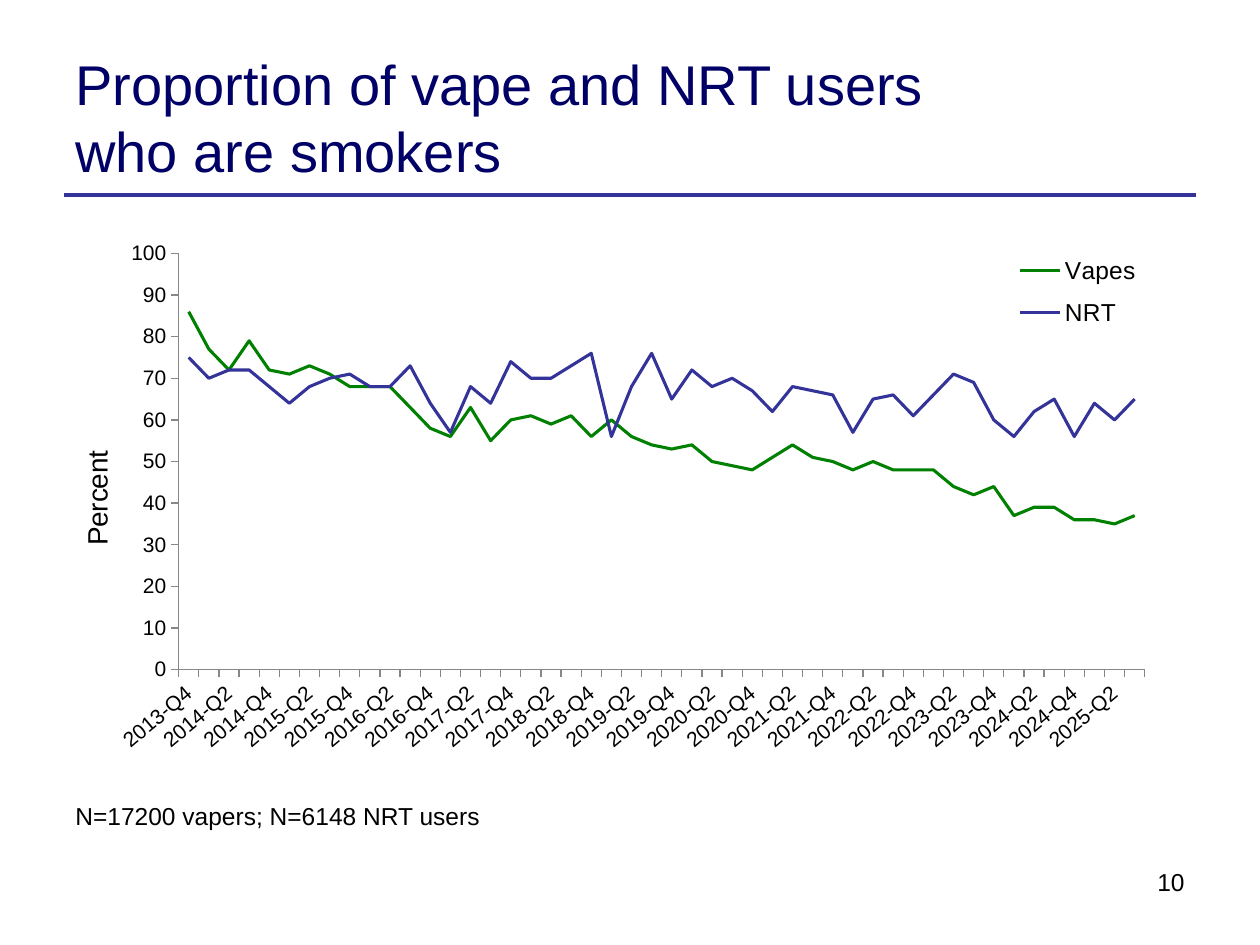
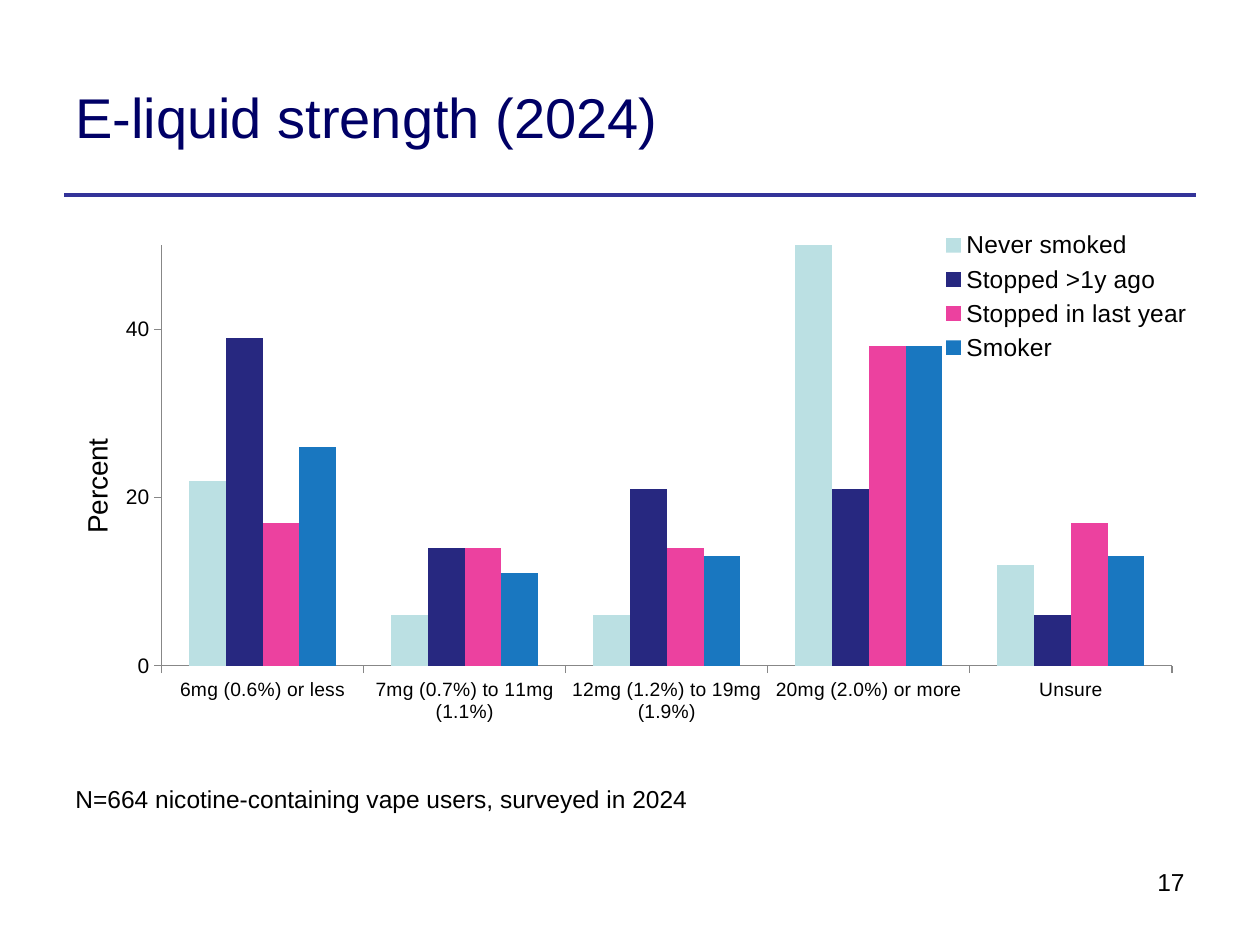
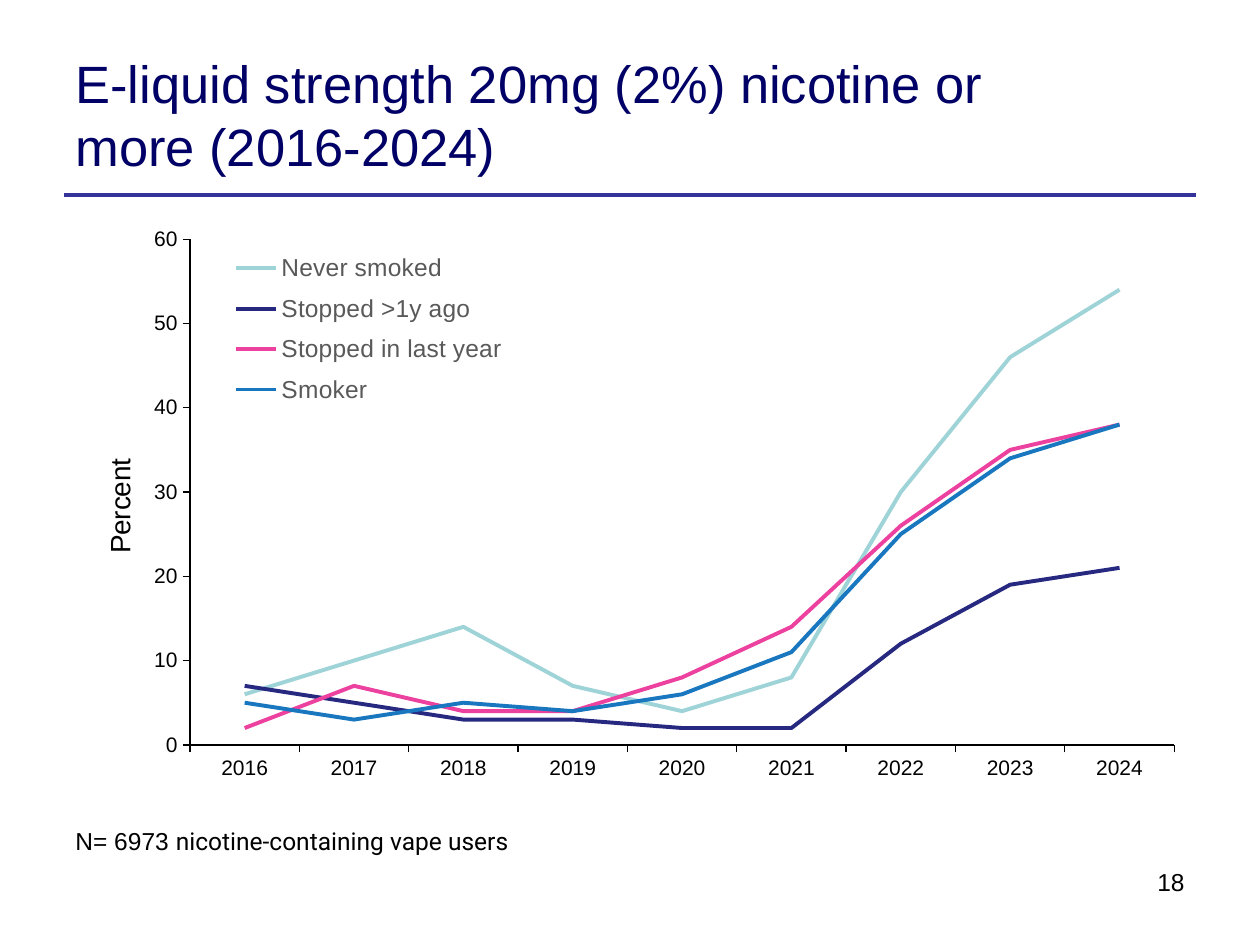
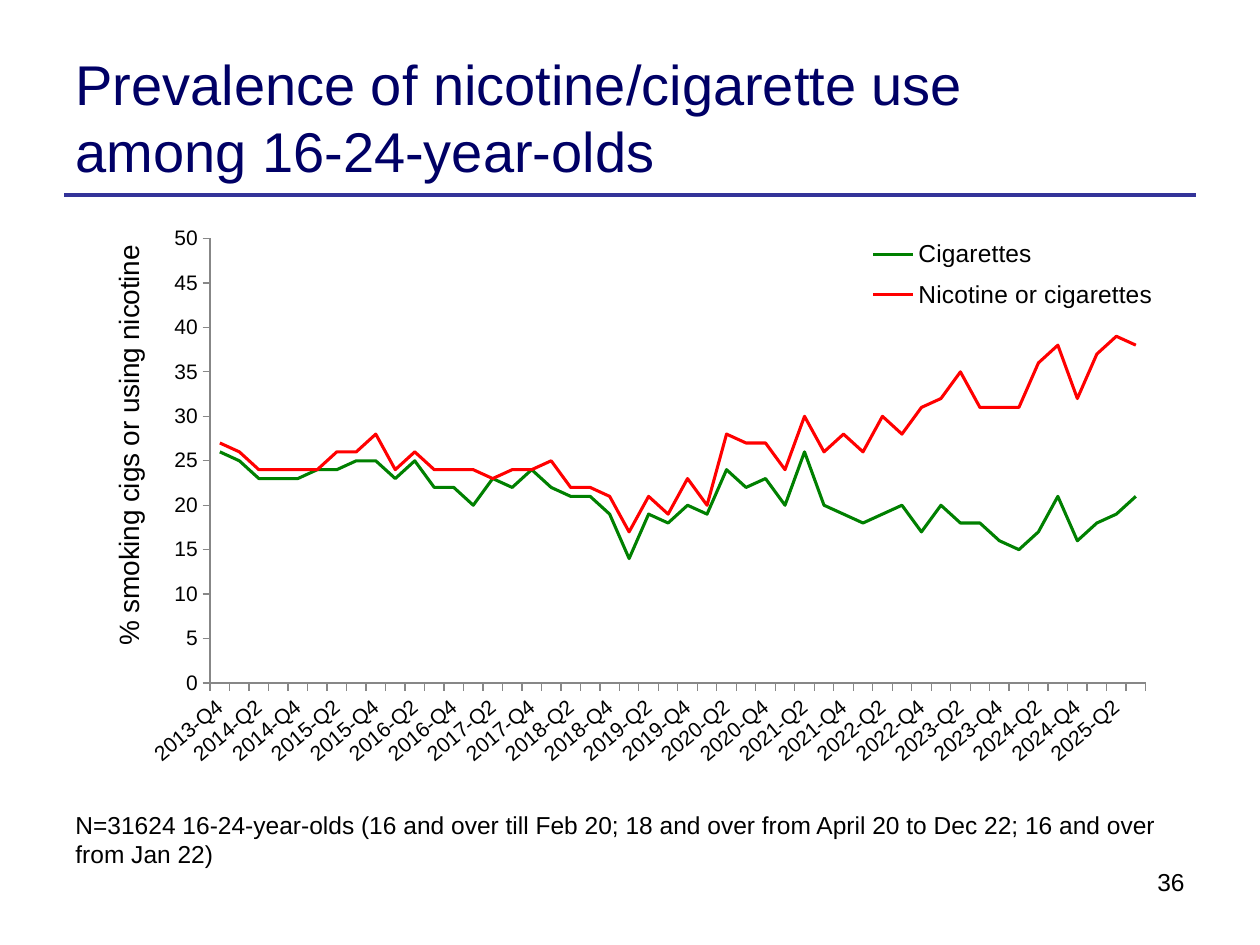
import lxml.etree
import pptx
import pptx.chart.data
import pptx.dml.color
import pptx.enum.chart
import pptx.enum.shapes
import pptx.enum.text
import pptx.oxml.ns
import pptx.util

COLUMNS, ROWS = 100, 75
FONT = "Arial"
COLORS = {
    "title": "000066",
    "rule": "333399",
    "text": "000000",
    "axis": "878787",
    "legend": "595959",
    "green": "008000",
    "red": "FF0000",
    "pale": "BBE0E3",
    "teal": "9ED3D7",
    "navy": "272880",
    "pink": "EC419F",
    "blue": "1977C0",
}
LINE = pptx.enum.chart.XL_CHART_TYPE.LINE
COLUMN = pptx.enum.chart.XL_CHART_TYPE.COLUMN_CLUSTERED
LEGEND = pptx.enum.chart.XL_LEGEND_POSITION
QUARTERS = [f"{2013 + index // 4}-Q{index % 4 + 1}" for index in range(3, 51)]
SMOKING_GROUPS = ["Never smoked", "Stopped >1y ago", "Stopped in last year", "Smoker"]

presentation = pptx.Presentation()
presentation.slide_width = pptx.util.Inches(10)
presentation.slide_height = pptx.util.Inches(7.5)


def rgb(name):
    return pptx.dml.color.RGBColor.from_string(COLORS[name])


def grid(left, top, width, height):
    column = presentation.slide_width / COLUMNS
    row = presentation.slide_height / ROWS
    return [round(length) for length in (left * column, top * row, width * column, height * row)]


def set_font(font, size, color="text", name=FONT):
    font.size = pptx.util.Pt(size)
    font.name = name
    font.bold = False
    font.color.rgb = rgb(color)


def add_text(slide, box, *runs, size=14, color="text", align="LEFT", anchor="TOP"):
    frame = slide.shapes.add_textbox(*grid(*box)).text_frame
    frame.word_wrap = True
    frame.vertical_anchor = pptx.enum.text.MSO_ANCHOR[anchor]
    paragraph = frame.paragraphs[0]
    paragraph.alignment = pptx.enum.text.PP_ALIGN[align]
    for text, font_name in runs:
        run = paragraph.add_run()
        run.text = text
        set_font(run.font, size, color, font_name)


def add_rule(slide, left, top, width):
    x, y, length, _ = grid(left, top, width, 0)
    rule = slide.shapes.add_connector(
        pptx.enum.shapes.MSO_CONNECTOR.STRAIGHT, x, y, x + length, y)
    rule.line.color.rgb = rgb("rule")
    rule.line.width = pptx.util.Pt(2.25)
    properties = rule._element.spPr
    lxml.etree.SubElement(properties, pptx.oxml.ns.qn("a:effectLst"))


def place(parent, shares, inner=False):
    qn = pptx.oxml.ns.qn
    layout = parent.find(qn("c:layout"))
    if layout is None:
        layout = parent.makeelement(qn("c:layout"))
        overlay = parent.find(qn("c:overlay"))
        parent.insert(0 if overlay is None else parent.index(overlay), layout)
    manual = lxml.etree.SubElement(layout, qn("c:manualLayout"))
    settings = [("layoutTarget", "inner")] if inner else []
    settings += [("xMode", "edge"), ("yMode", "edge")]
    settings += zip("xywh", shares)
    for tag, value in settings:
        lxml.etree.SubElement(manual, qn(f"c:{tag}"), val=str(value))


def format_axis(axis, size, color):
    axis.has_major_gridlines = False
    axis.major_tick_mark = pptx.enum.chart.XL_TICK_MARK.OUTSIDE
    axis.minor_tick_mark = pptx.enum.chart.XL_TICK_MARK.NONE
    axis.format.line.color.rgb = rgb(color)
    axis.format.line.width = pptx.util.Pt(0.75)
    set_font(axis.tick_labels.font, size)


def add_axis_title(chart, text, position):
    axis = chart.value_axis
    frame = axis.axis_title.text_frame
    frame.text = text
    set_font(frame.paragraphs[0].runs[0].font, 16)
    title = chart._chartSpace.xpath(".//c:valAx/c:title")[0]
    title.xpath(".//a:bodyPr")[0].set("rot", "-5400000")
    place(title, position)


def tilt_labels(chart):
    axis = chart._chartSpace.xpath(".//c:catAx")[0]
    axis.xpath("./c:txPr/a:bodyPr")[0].set("rot", "-2400000")
    skip = axis.makeelement(pptx.oxml.ns.qn("c:tickLblSkip"), val="2")
    axis.xpath("./c:noMultiLvlLbl")[0].addprevious(skip)


def add_legend(chart, position, shares, color, overlay):
    chart.has_legend = True
    chart.legend.position = position
    chart.legend.include_in_layout = overlay
    set_font(chart.legend.font, 14, color)
    place(chart._chartSpace.xpath(".//c:legend")[0], shares)


def add_chart(slide, box, categories, series, plot, legend, axis_title, title_at,
              kind=LINE, weight=1.75, maximum=None, major=None, category_size=12,
              axis_color="axis", legend_color="text", legend_position=LEGEND.RIGHT,
              overlay=False, tilted=False):
    data = pptx.chart.data.CategoryChartData()
    data.categories = categories
    for name, _, values in series:
        data.add_series(name, values)
    chart = slide.shapes.add_chart(kind, *grid(*box), data).chart
    chart.has_title = False
    set_font(chart.font, 18)
    chart.plots[0].vary_by_categories = False
    for item, (_, color, _) in zip(chart.plots[0].series, series):
        if kind == LINE:
            item.smooth = False
            item.format.line.color.rgb = rgb(color)
            item.format.line.width = pptx.util.Pt(weight)
        else:
            item.format.fill.solid()
            item.format.fill.fore_color.rgb = rgb(color)
    if kind == COLUMN:
        chart.plots[0].gap_width = 150
    format_axis(chart.category_axis, category_size, axis_color)
    format_axis(chart.value_axis, 12, axis_color)
    if maximum:
        chart.value_axis.minimum_scale = 0
        chart.value_axis.maximum_scale = maximum
    if major:
        chart.value_axis.major_unit = major
    if tilted:
        tilt_labels(chart)
    add_axis_title(chart, axis_title, title_at)
    add_legend(chart, legend_position, legend, legend_color, overlay)
    place(chart._chartSpace.xpath(".//c:plotArea")[0], plot, inner=True)


def add_chart_slide(title, number, note, note_box, chart,
                    title_box=(5, 3, 78.9, 12.5), title_size=32):
    slide = presentation.slides.add_slide(presentation.slide_layouts[6])
    add_rule(slide, 5.1, 15.5, 89.8)
    add_text(slide, title_box, (title, FONT), size=title_size, color="title", anchor="MIDDLE")
    add_text(slide, (67.3, 68.3, 27.7, 5.2), (str(number), FONT), align="RIGHT")
    add_chart(slide, **chart)
    add_text(slide, note_box, *note)


def main():
    add_chart_slide(
        "Proportion of vape and NRT users who are smokers", 10,
        [("N=17200 vapers; N=6148 NRT users", FONT)], (5, 63.1, 82.6, 3.4),
        dict(
            box=(5, 17.5, 90, 43.6), categories=QUARTERS, maximum=100, tilted=True,
            plot=(0.102, 0.06, 0.852, 0.758), legend=(0.83, 0.04, 0.13, 0.18), overlay=True,
            axis_title="Percent", title_at=(0.01, 0.41),
            series=[
                ("Vapes", "green", [
                    86, 77, 72, 79, 72, 71, 73, 71, 68, 68, 68, 63, 58, 56, 63, 55,
                    60, 61, 59, 61, 56, 60, 56, 54, 53, 54, 50, 49, 48, 51, 54, 51,
                    50, 48, 50, 48, 48, 48, 44, 42, 44, 37, 39, 39, 36, 36, 35, 37]),
                ("NRT", "rule", [
                    75, 70, 72, 72, 68, 64, 68, 70, 71, 68, 68, 73, 64, 57, 68, 64,
                    74, 70, 70, 73, 76, 56, 68, 76, 65, 72, 68, 70, 67, 62, 68, 67,
                    66, 57, 65, 66, 61, 66, 71, 69, 60, 56, 62, 65, 56, 64, 60, 65]),
            ]),
        title_box=(5, 3, 77.1, 12.5))

    strengths = [[22, 6, 6, 54, 12], [39, 14, 21, 21, 6], [17, 14, 14, 38, 17],
                 [26, 11, 13, 38, 13]]
    add_chart_slide(
        "E-liquid strength (2024)", 17,
        [("N=664 nicotine-containing vape users, surveyed in 2024", FONT)],
        (5, 61.7, 93, 3.4),
        dict(
            box=(5, 17.4, 90, 47.2), kind=COLUMN, maximum=50, major=20, category_size=11,
            categories=["6mg (0.6%) or less", "7mg (0.7%) to 11mg (1.1%)",
                        "12mg (1.2%) to 19mg (1.9%)", "20mg (2.0%) or more", "Unsure"],
            plot=(0.087, 0.044, 0.891, 0.707), legend=(0.77, 0.01, 0.23, 0.24),
            axis_title="Percent", title_at=(0.01, 0.36),
            series=list(zip(SMOKING_GROUPS, ["pale", "navy", "pink", "blue"], strengths))))

    trends = [[6, 10, 14, 7, 4, 8, 30, 46, 54], [7, 5, 3, 3, 2, 2, 12, 19, 21],
              [2, 7, 4, 4, 8, 14, 26, 35, 38], [5, 3, 5, 4, 6, 11, 25, 34, 38]]
    add_chart_slide(
        "E-liquid strength 20mg (2%) nicotine or more (2016-2024)", 18,
        [("N= 6973 ", FONT), ("nicotine-containing vape users", "Roboto")],
        (5, 65.1, 85.1, 3.4),
        dict(
            box=(5, 17.2, 90, 49.5), weight=2.25, axis_color="text", legend_color="legend",
            legend_position=LEGEND.BOTTOM,
            categories=[str(year) for year in range(2016, 2025)],
            plot=(0.112, 0.036, 0.868, 0.811), legend=(0.14, 0.04, 0.26, 0.28),
            axis_title="Percent", title_at=(0.03, 0.38),
            series=list(zip(SMOKING_GROUPS, ["teal", "navy", "pink", "blue"], trends))),
        title_box=(5, 2.8, 78.9, 12.5), title_size=30)

    add_chart_slide(
        "Prevalence of nicotine/cigarette use among 16-24-year-olds", 36,
        [("N=31624 16-24-year-olds (16 and over till Feb 20; 18 and over from April 20 "
          "to Dec 22; 16 and over from Jan 22)", FONT)], (5, 63.8, 88.9, 5.7),
        dict(
            box=(4.8, 17.1, 90, 49.5), categories=QUARTERS, maximum=50, tilted=True,
            plot=(0.132, 0.037, 0.825, 0.713), legend=(0.71, 0.02, 0.26, 0.15),
            axis_title="% smoking cigs or using nicotine", title_at=(0.04, 0.04),
            series=[
                ("Cigarettes", "green", [
                    26, 25, 23, 23, 23, 24, 24, 25, 25, 23, 25, 22, 22, 20, 23, 22,
                    24, 22, 21, 21, 19, 14, 19, 18, 20, 19, 24, 22, 23, 20, 26, 20,
                    19, 18, 19, 20, 17, 20, 18, 18, 16, 15, 17, 21, 16, 18, 19, 21]),
                ("Nicotine or cigarettes", "red", [
                    27, 26, 24, 24, 24, 24, 26, 26, 28, 24, 26, 24, 24, 24, 23, 24,
                    24, 25, 22, 22, 21, 17, 21, 19, 23, 20, 28, 27, 27, 24, 30, 26,
                    28, 26, 30, 28, 31, 32, 35, 31, 31, 31, 36, 38, 32, 37, 39, 38]),
            ]))

    presentation.save("out.pptx")


if __name__ == "__main__":
    main()
